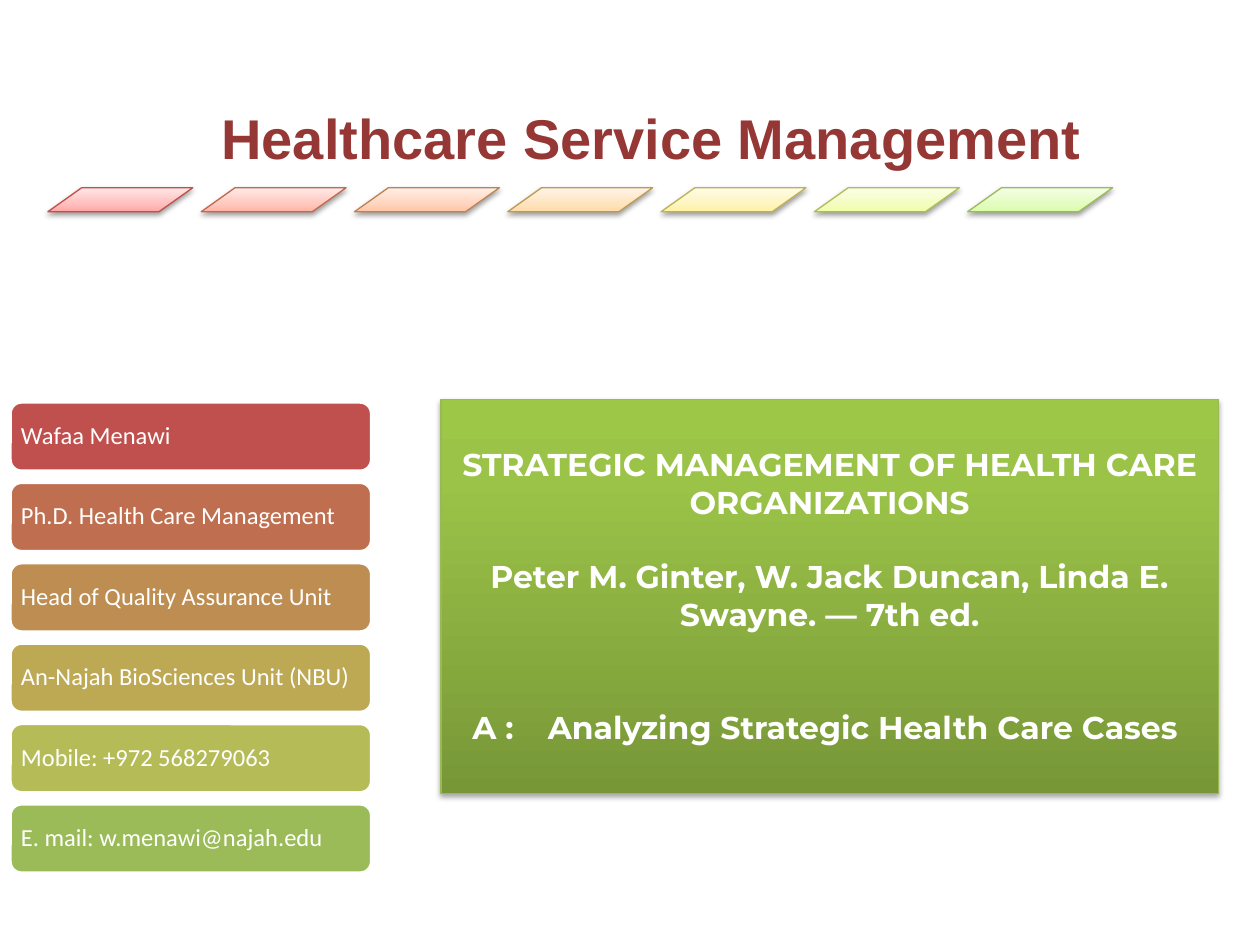
from copy import deepcopy
from typing import NamedTuple

from lxml.etree import SubElement
from pptx import Presentation
from pptx.dml.color import RGBColor
from pptx.enum.shapes import MSO_SHAPE
from pptx.enum.text import MSO_ANCHOR, PP_ALIGN
from pptx.oxml.ns import qn
from pptx.shapes.autoshape import Shape
from pptx.slide import Slide
from pptx.text.text import _Paragraph
from pptx.util import Inches, Pt

WHITE = RGBColor(0xFF, 0xFF, 0xFF)
TITLE_RED = RGBColor(0x95, 0x37, 0x35)
BOOK_EDGE = RGBColor(0x98, 0xB9, 0x55)
BOOK_STOPS = ((0, "779737"), (0.8, "9BC348"), (1, "9DC746"))


class Stripe(NamedTuple):
    edge: RGBColor
    bottom: str
    middle: str
    top: str


class Contact(NamedTuple):
    text: str
    color: RGBColor


class BookLine(NamedTuple):
    text: str
    space_before: int


STRIPES = [
    Stripe(RGBColor(0xC0, 0x50, 0x4D), "FFA6A5", "FFC0BF", "FFE7E7"),
    Stripe(RGBColor(0xBF, 0x6A, 0x4F), "FFB4A5", "FFC9BF", "FFEAE7"),
    Stripe(RGBColor(0xBE, 0x83, 0x51), "FFC5A5", "FFD5BF", "FFEFE7"),
    Stripe(RGBColor(0xBD, 0x9B, 0x53), "FFDAA5", "FEE4C0", "FFF4E7"),
    Stripe(RGBColor(0xBD, 0xB2, 0x55), "FFF2A5", "FEF5C0", "FFFBE7"),
    Stripe(RGBColor(0xB1, 0xBC, 0x57), "F1FEA6", "F4FDC1", "FBFFE7"),
    Stripe(RGBColor(0x9B, 0xBB, 0x59), "DAFDA7", "E4FCC2", "F5FFE7"),
]
CONTACTS = [
    Contact("Wafaa Menawi", RGBColor(0xC0, 0x50, 0x4D)),
    Contact("Ph.D. Health Care Management", RGBColor(0xBF, 0x6F, 0x4F)),
    Contact("Head of Quality Assurance Unit", RGBColor(0xBE, 0x8D, 0x52)),
    Contact("An-Najah BioSciences Unit (NBU)", RGBColor(0xBD, 0xA9, 0x54)),
    Contact("Mobile: +972 568279063", RGBColor(0xB5, 0xBC, 0x57)),
    Contact("E. mail: w.menawi@najah.edu", RGBColor(0x9B, 0xBB, 0x59)),
]
BOOK_LINES = [
    BookLine("STRATEGIC MANAGEMENT OF HEALTH CARE ORGANIZATIONS", 0),
    BookLine("Peter M. Ginter, W. Jack Duncan, Linda E. Swayne. — 7th ed.", 21),
    BookLine("A :\tAnalyzing Strategic Health Care Cases", 43),
]


def style_font(paragraph: _Paragraph, name: str, size: int, color: RGBColor,
               bold: bool = False) -> None:
    font = paragraph.font
    font.name, font.size, font.bold = name, Pt(size), bold
    font.color.rgb = color


def set_insets(shape: Shape, inset: float) -> None:
    frame = shape.text_frame
    frame.margin_left = frame.margin_right = Inches(inset)
    frame.margin_top = frame.margin_bottom = Inches(inset)


def fill_upward(shape: Shape, stops: tuple) -> None:
    """Three-stop gradient whose first colour lies at the bottom."""
    shape.fill.gradient()
    stop_list = shape._element.spPr.find(qn("a:gradFill")).find(qn("a:gsLst"))
    stop_list.append(deepcopy(stop_list[-1]))
    shape.fill.gradient_angle = 90
    for stop, (position, color) in zip(shape.fill.gradient_stops, stops):
        stop.position = position
        stop.color.rgb = RGBColor.from_string(color)


def drop_shadow(shape: Shape, distance: float, opacity: int) -> None:
    shape.shadow.inherit = False
    effects = shape._element.spPr.find(qn("a:effectLst"))
    shadow = SubElement(effects, qn("a:outerShdw"), blurRad=str(Pt(3.1)),
                        dist=str(Pt(distance)), dir="5400000", rotWithShape="0")
    color = SubElement(shadow, qn("a:srgbClr"), val="000000")
    SubElement(color, qn("a:alpha"), val=str(opacity * 1000))


def add_title(slide: Slide) -> None:
    title = slide.shapes.add_textbox(Inches(0.38), Inches(0.99), Inches(9.58), Inches(0.5))
    set_insets(title, 0.13)
    title.text_frame.word_wrap = True
    title.text_frame.vertical_anchor = MSO_ANCHOR.BOTTOM
    paragraph = title.text_frame.paragraphs[0]
    paragraph.text = "Healthcare Service Management"
    paragraph.alignment = PP_ALIGN.CENTER
    paragraph.line_spacing = 0.9
    style_font(paragraph, "Arial", 32, TITLE_RED, bold=True)


def add_stripe(slide: Slide, left: float, stripe: Stripe) -> None:
    shape = slide.shapes.add_shape(MSO_SHAPE.PARALLELOGRAM, Inches(left), Inches(1.49),
                                   Inches(1.15), Inches(0.19))
    shape.adjustments[0] = 1.41
    fill_upward(shape, ((0, stripe.bottom), (0.35, stripe.middle), (1, stripe.top)))
    shape.line.color.rgb = stripe.edge
    shape.line.width = Pt(0.75)
    drop_shadow(shape, 1.6, 38)


def add_contact(slide: Slide, top: float, contact: Contact) -> None:
    pill = slide.shapes.add_shape(MSO_SHAPE.ROUNDED_RECTANGLE, Inches(0.08), Inches(top),
                                  Inches(2.87), Inches(0.55))
    pill.shadow.inherit = False
    pill.fill.solid()
    pill.fill.fore_color.rgb = contact.color
    pill.line.color.rgb = WHITE
    pill.line.width = Pt(2)
    set_insets(pill, 0.06)
    pill.text_frame.vertical_anchor = MSO_ANCHOR.MIDDLE
    paragraph = pill.text_frame.paragraphs[0]
    paragraph.text = contact.text
    paragraph.alignment = PP_ALIGN.LEFT
    paragraph.line_spacing = 0.9
    style_font(paragraph, "Calibri", 14, WHITE)


def add_book(slide: Slide) -> None:
    book = slide.shapes.add_shape(MSO_SHAPE.RECTANGLE, Inches(3.5), Inches(3.17),
                                  Inches(6.17), Inches(3.13))
    fill_upward(book, BOOK_STOPS)
    book.line.color.rgb = BOOK_EDGE
    book.line.width = Pt(0.75)
    drop_shadow(book, 1.8, 35)
    frame = book.text_frame
    frame.margin_top = Inches(0.36)
    frame.vertical_anchor = MSO_ANCHOR.TOP
    for index, line in enumerate(BOOK_LINES):
        paragraph = frame.add_paragraph() if index else frame.paragraphs[0]
        paragraph.text = line.text
        paragraph.alignment = PP_ALIGN.CENTER
        paragraph.space_before = Pt(line.space_before)
        if "\t" in line.text:
            # The label hangs to the left of the tabbed text
            paragraph.alignment = PP_ALIGN.LEFT
            properties = paragraph._p.get_or_add_pPr()
            properties.set("marL", str(Inches(0.75)))
            properties.set("indent", str(Inches(-0.6)))
            tabs = SubElement(properties, qn("a:tabLst"))
            SubElement(tabs, qn("a:tab"), pos=str(Inches(0.75)), algn="l")
        style_font(paragraph, "Montserrat", 18, WHITE, bold=True)


def main() -> None:
    presentation = Presentation()
    presentation.slide_width, presentation.slide_height = Inches(10), Inches(7.5)
    slide = presentation.slides.add_slide(presentation.slide_layouts[6])

    # Title with its row of stripes
    add_title(slide)
    stripe_pitch = (7.68 - 0.38) / (len(STRIPES) - 1)
    for index, stripe in enumerate(STRIPES):
        add_stripe(slide, 0.38 + index * stripe_pitch, stripe)

    # Lecturer's contact details
    contact_pitch = (6.38 - 3.19) / (len(CONTACTS) - 1)
    for index, contact in enumerate(CONTACTS):
        add_contact(slide, 3.19 + index * contact_pitch, contact)

    # Course book
    add_book(slide)
    presentation.save("out.pptx")


if __name__ == "__main__":
    main()
